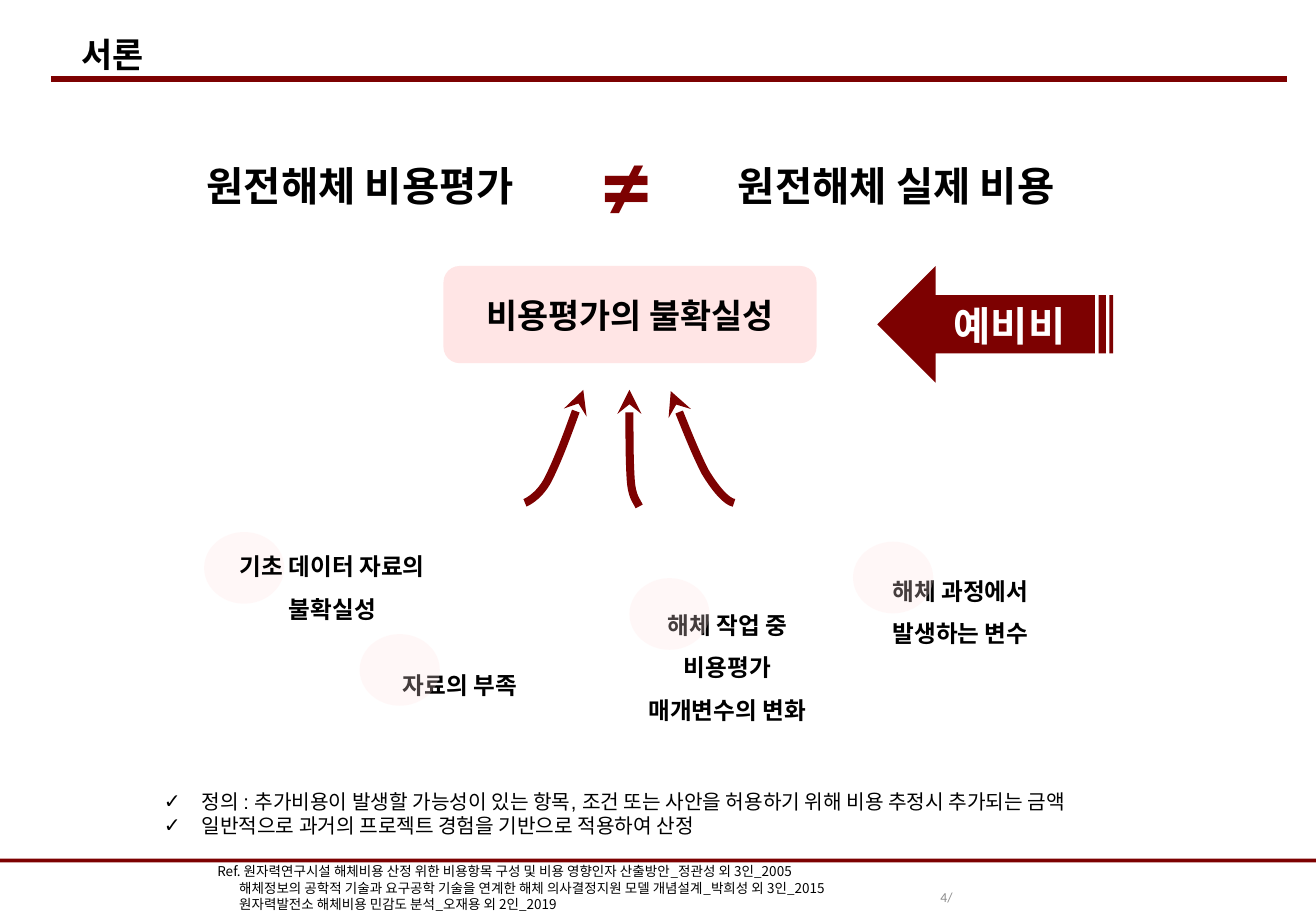
import lxml.etree
import pptx
import pptx.dml.color
import pptx.enum.shapes
import pptx.enum.text
import pptx.util
from pptx.oxml.ns import qn

COLOURS = {"wine": "7D0101", "blush": "FFE5E5", "black": "000000",
           "white": "FFFFFF", "grey": "8C8C8C"}
ALIGN = pptx.enum.text.PP_ALIGN
ANCHOR = pptx.enum.text.MSO_ANCHOR
SHAPE = pptx.enum.shapes.MSO_SHAPE
CELL = 0.1  # inches per grid column and row


def grid(*cells):
    return [pptx.util.Inches(cell * CELL) for cell in cells]


def colour(name):
    return pptx.dml.color.RGBColor.from_string(COLOURS[name])


class Deck:
    """Places styled elements; every length is in grid columns and rows."""

    def __init__(self, columns, rows):
        self.deck = pptx.Presentation()
        self.deck.slide_width, self.deck.slide_height = grid(columns, rows)
        self.slide = self.deck.slides.add_slide(self.deck.slide_layouts[5])
        self.shapes = self.slide.shapes

    def set_lines(self, frame, lines, size, font="Calibri", ink="black", bold=True,
                  align=ALIGN.CENTER, spacing=None, bullet=None, hanging=0, later_indent=0):
        frame.word_wrap = True
        frame.auto_size = pptx.enum.text.MSO_AUTO_SIZE.NONE
        for index, line in enumerate(lines):
            paragraph = frame.paragraphs[0] if index == 0 else frame.add_paragraph()
            paragraph.text = line
            paragraph.alignment = align
            if spacing:
                paragraph.line_spacing = spacing
            properties = paragraph._p.get_or_add_pPr()
            if bullet:
                indent, = grid(hanging)
                properties.set("marL", str(indent))
                properties.set("indent", str(-indent))
                lxml.etree.SubElement(properties, qn("a:buFont"), typeface=font)
                lxml.etree.SubElement(properties, qn("a:buChar"), char=bullet)
            elif index and later_indent:
                properties.set("marL", str(grid(later_indent)[0]))
            paragraph.font.size = pptx.util.Pt(size)
            paragraph.font.name = font
            paragraph.font.bold = bold
            paragraph.font.color.rgb = colour(ink)

    def title(self, box, text, **style):
        heading = self.shapes.title
        heading.left, heading.top, heading.width, heading.height = grid(*box)
        heading.text_frame.vertical_anchor = ANCHOR.TOP
        self.set_lines(heading.text_frame, [text], **style)

    def text(self, box, *lines, **style):
        self.set_lines(self.shapes.add_textbox(*grid(*box)).text_frame, lines, **style)

    def shape(self, kind, box, fill, opacity=None, rotation=0):
        shape = self.shapes.add_shape(kind, *grid(*box))
        shape.shadow.inherit = False
        shape.fill.solid()
        shape.fill.fore_color.rgb = colour(fill)
        shape.line.fill.background()
        shape.rotation = rotation
        if opacity:
            tint = shape._element.spPr.find(".//" + qn("a:srgbClr"))
            lxml.etree.SubElement(tint, qn("a:alpha"), val=str(opacity * 1000))
        return shape

    def rule(self, start, end, ink, weight):
        line = self.shapes.add_connector(
            pptx.enum.shapes.MSO_CONNECTOR.STRAIGHT, *grid(*start, *end))
        line.line.color.rgb = colour(ink)
        line.line.width = pptx.util.Pt(weight)
        lxml.etree.SubElement(line._element.spPr, qn("a:effectLst"))

    def curved_arrow(self, points, ink, weight):
        """Draw Bézier curves (a start, then three points each) with the head at the start."""
        start, *rest = [grid(*point) for point in points]
        builder = self.shapes.build_freeform(*start)
        builder.add_line_segments(rest, close=False)
        arrow = builder.convert_to_shape()
        arrow.shadow.inherit = False
        arrow.fill.background()
        arrow.line.color.rgb = colour(ink)
        arrow.line.width = pptx.util.Pt(weight)
        outline = arrow._element.spPr.find(qn("a:ln"))
        lxml.etree.SubElement(outline, qn("a:headEnd"), type="stealth")
        track = arrow._element.spPr.find(".//" + qn("a:path"))
        segments = track.findall(qn("a:lnTo"))
        for first in range(0, len(segments), 3):
            curve = lxml.etree.SubElement(track, qn("a:cubicBezTo"))
            for segment in segments[first:first + 3]:
                curve.append(segment[0])
                track.remove(segment)


def main():
    deck = Deck(108.3, 75)
    deck.shape(SHAPE.RECTANGLE, (0, 70.7, 108.3, 0.3), "wine")
    deck.text((67.1, 72.7, 12.3, 2.4), "4/", size=8.1, ink="grey", bold=False,
              align=ALIGN.RIGHT)
    deck.title((5.7, 2.3, 22, 4.4), "서론", size=20, font="Arial", align=ALIGN.LEFT)
    deck.rule((4.2, 6.5), (105.9, 6.5), "wine", 4)

    deck.text((11.7, 12.8, 35.9, 5), "원전해체 비용평가", size=24)
    deck.text((55.8, 12.8, 35.9, 5), "원전해체 실제 비용", size=24)
    deck.text((33.6, 9.4, 35.9, 11.1), "≠", size=60, ink="wine")

    arrows = [
        [(51.8, 32.1), (51.8, 34.9), (51.8, 37.7), (51.9, 39.4),
         (52, 41), (52.4, 41.2), (52.6, 41.7)],
        [(55.2, 32.2), (56.2, 34.7), (57.2, 37.2), (58, 38.8),
         (58.9, 40.3), (59.8, 41.3), (60.4, 41.4)],
        [(48, 32.1), (47, 35), (45.9, 37.9), (45.1, 39.5),
         (44.3, 41), (43.2, 41.4), (43.2, 41.4)],
    ]
    for points in arrows:
        deck.curved_arrow(points, "wine", 4.75)

    causes = [
        ((16.8, 43.8), (18, 43.8, 18.7, 8.1), ["기초 데이터 자료의 불확실성"], True),
        ((29.6, 52.2), (29.4, 53.6, 16.9, 4.2), ["자료의 부족"], False),
        ((51.8, 47.6), (51.4, 48.6, 16.9, 11.6),
         ["해체 작업 중", "비용평가", "매개변수의 변화"], False),
        ((70.2, 44.6), (70.6, 45.8, 16.9, 7.7), ["해체 과정에서", "발생하는 변수"], False),
    ]
    for corner, label_box, lines, label_on_top in causes:
        if not label_on_top:
            deck.text(label_box, *lines, size=14, spacing=1.5)
        deck.shape(SHAPE.FLOWCHART_CONNECTOR, (*corner, 6.6, 5.9), "blush", opacity=27)
        if label_on_top:
            deck.text(label_box, *lines, size=14, spacing=1.5)

    uncertainty = deck.shape(SHAPE.ROUNDED_RECTANGLE, (36.5, 21.9, 30.7, 8), "blush")
    uncertainty.text_frame.vertical_anchor = ANCHOR.MIDDLE
    deck.set_lines(uncertainty.text_frame, ["비용평가의 불확실성"], size=20)
    deck.shape(SHAPE.STRIPED_RIGHT_ARROW, (72.2, 21.9, 19.4, 9.6), "wine", rotation=180)
    deck.text((77.5, 24.3, 16.3, 5), "예비비", size=24, ink="white", align=ALIGN.LEFT)

    deck.text((12.5, 64.5, 95.8, 5),
              "정의 : 추가비용이 발생할 가능성이 있는 항목, 조건 또는 사안을 허용하기 위해 "
              "비용 추정시 추가되는 금액",
              "일반적으로 과거의 프로젝트 경험을 기반으로 적용하여 산정",
              size=12, font="Arial", bold=False, align=ALIGN.LEFT, bullet="✓", hanging=3.1)
    deck.text((16.9, 70.6, 62.6, 5),
              "Ref. 원자력연구시설 해체비용 산정 위한 비용항목 구성 및 비용 영향인자 "
              "산출방안_정관성 외 3인_2005",
              "해체정보의 공학적 기술과 요구공학 기술을 연계한 해체 의사결정지원 모델 "
              "개념설계_박희성 외 3인_2015",
              "원자력발전소 해체비용 민감도 분석_오재용 외 2인_2019",
              size=8, font="Noto Sans CJK KR", bold=False, align=ALIGN.LEFT, later_indent=1.8)
    deck.deck.save("out.pptx")


if __name__ == "__main__":
    main()
